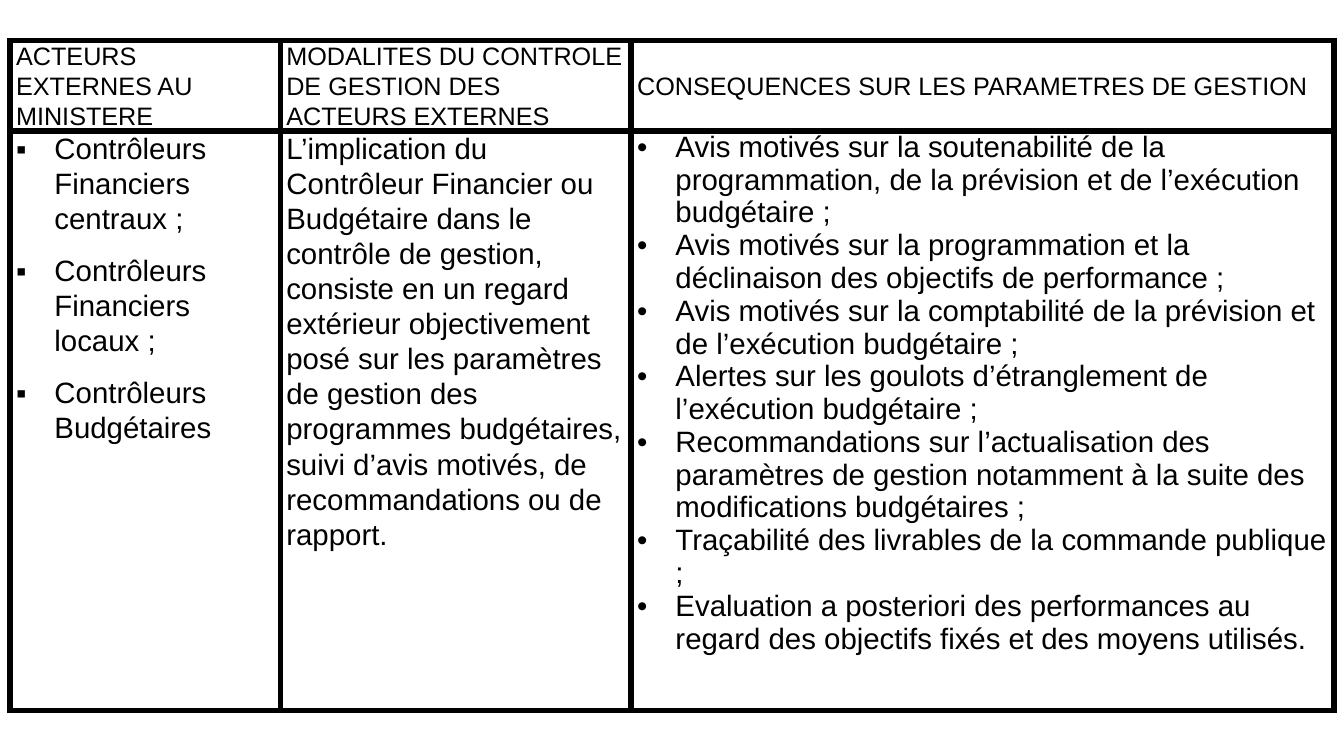
from dataclasses import dataclass

from lxml import etree
from pptx import Presentation
from pptx.dml.color import RGBColor
from pptx.enum import text
from pptx.oxml import ns
from pptx.util import Inches, Pt

BLACK = "000000"
BORDER_PT = 4.5
COL_WIDTHS = [2.68, 3.48, 6.97]
ROW_HEIGHTS = [0.66, 5.75]


@dataclass
class Content:
    paragraphs: list[str]
    size: float = 21
    bullet: str = ""
    line_spacing: float = 1.07
    gap: float = 0
    anchor: text.MSO_ANCHOR = text.MSO_ANCHOR.TOP


def header(title: str) -> Content:
    return Content([title], size=18, anchor=text.MSO_ANCHOR.MIDDLE)


ROWS = [
    [
        header("ACTEURS EXTERNES AU MINISTERE"),
        header("MODALITES DU CONTROLE DE GESTION DES ACTEURS EXTERNES"),
        header("CONSEQUENCES SUR LES PARAMETRES DE GESTION"),
    ],
    [
        Content([
            "Contrôleurs Financiers centraux ;",
            "Contrôleurs Financiers locaux ;",
            "Contrôleurs Budgétaires",
        ], bullet="▪", gap=6),
        Content([
            "L’implication du Contrôleur Financier ou Budgétaire dans le "
            "contrôle de gestion, consiste en un regard extérieur objectivement "
            "posé sur les paramètres de gestion des programmes budgétaires, "
            "suivi d’avis motivés, de recommandations ou de rapport.",
        ], gap=6),
        Content([
            "Avis motivés sur la soutenabilité de la programmation, de la "
            "prévision et de l’exécution budgétaire ;",
            "Avis motivés sur la programmation et la déclinaison des objectifs "
            "de performance ;",
            "Avis motivés sur la comptabilité de la prévision et de l’exécution "
            "budgétaire ;",
            "Alertes sur les goulots d’étranglement de l’exécution budgétaire ;",
            "Recommandations sur l’actualisation des paramètres de gestion "
            "notamment à la suite des modifications budgétaires ;",
            "Traçabilité des livrables de la commande publique ;",
            "Evaluation a posteriori des performances au regard des objectifs "
            "fixés et des moyens utilisés.",
        ], bullet="•", line_spacing=1.0),
    ],
]


def rgb(color: str) -> RGBColor:
    return RGBColor.from_string(color)


def add_borders(cell) -> None:
    """Put the four side lines ahead of the cell's fill, as the schema asks."""
    tc_pr = cell._tc.get_or_add_tcPr()
    for i, side in enumerate(("lnL", "lnR", "lnT", "lnB")):
        ln = etree.Element(ns.qn(f"a:{side}"), w=str(Pt(BORDER_PT)))
        fill = etree.SubElement(ln, ns.qn("a:solidFill"))
        etree.SubElement(fill, ns.qn("a:srgbClr"), val=BLACK)
        tc_pr.insert(i, ln)


def add_bullet(p, char: str) -> None:
    p_pr = p._p.get_or_add_pPr()
    p_pr.set("marL", str(Inches(0.38)))
    p_pr.set("indent", str(-Inches(0.38)))
    etree.SubElement(p_pr, ns.qn("a:buFont"), typeface="Arial")
    etree.SubElement(p_pr, ns.qn("a:buChar"), char=char)


def fill_cell(cell, content: Content) -> None:
    cell.margin_left = cell.margin_right = Inches(0.06)
    cell.margin_top = cell.margin_bottom = 0
    cell.vertical_anchor = content.anchor
    cell.fill.background()
    add_borders(cell)
    tf = cell.text_frame
    tf.text = "\n".join(content.paragraphs)
    for p in tf.paragraphs:
        p.line_spacing = content.line_spacing
        p.space_before = p.space_after = Pt(content.gap)
        if content.bullet:
            add_bullet(p, content.bullet)
        for r in p.runs:
            r.font.name = "Arial"
            r.font.size = Pt(content.size)
            r.font.bold = False
            r.font.color.rgb = rgb(BLACK)


def main() -> None:
    prs = Presentation()
    prs.slide_width, prs.slide_height = Inches(13.33), Inches(7.5)
    s = prs.slides.add_slide(prs.slide_layouts[6])
    table = s.shapes.add_table(
        len(ROW_HEIGHTS), len(COL_WIDTHS), Inches(0.1), Inches(0.4),
        Inches(sum(COL_WIDTHS)), Inches(sum(ROW_HEIGHTS))).table
    table.first_row = table.horz_banding = False
    for column, width in zip(table.columns, COL_WIDTHS):
        column.width = Inches(width)
    for i, (row, height) in enumerate(zip(ROWS, ROW_HEIGHTS)):
        table.rows[i].height = Inches(height)
        for j, content in enumerate(row):
            fill_cell(table.cell(i, j), content)
    prs.save("out.pptx")


if __name__ == "__main__":
    main()
